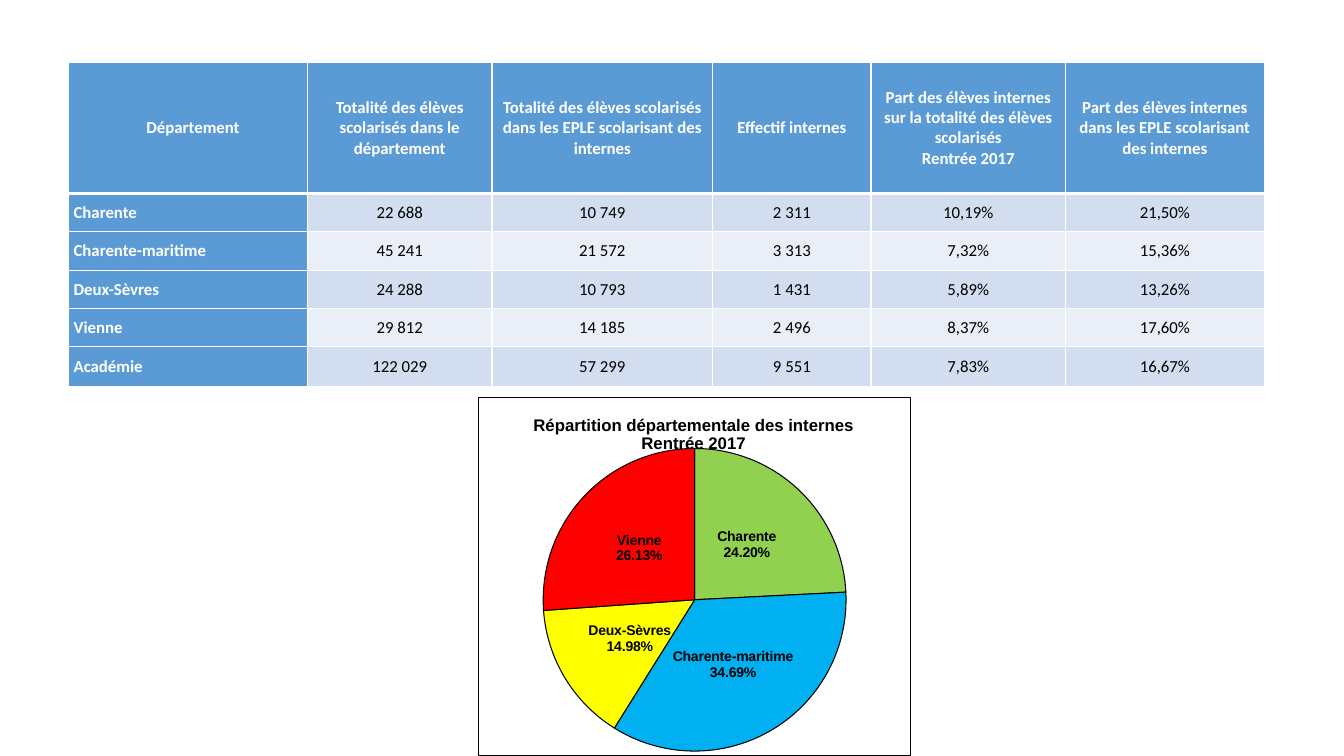
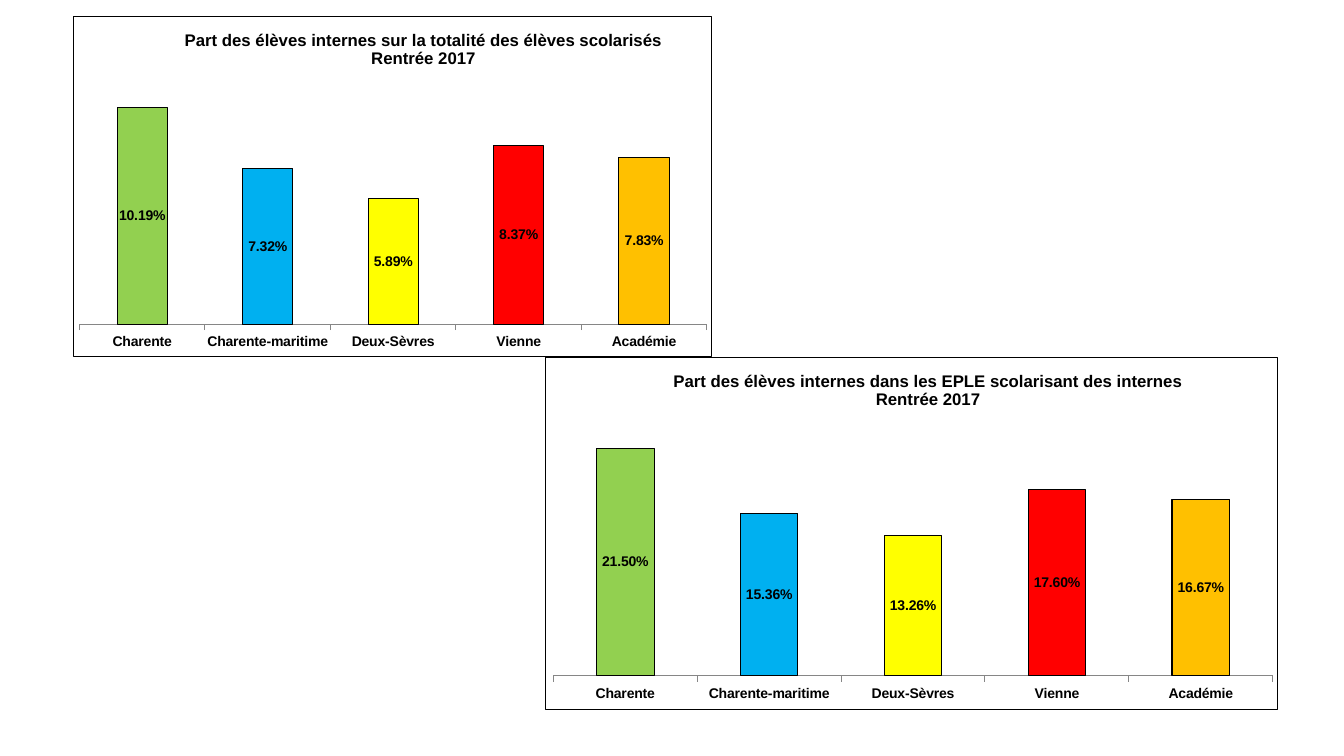
from dataclasses import dataclass
from typing import Any

from lxml import etree
from pptx import Presentation
from pptx import util as u
from pptx.chart import data as cd
from pptx.dml.color import RGBColor
from pptx.enum import chart as ce
from pptx.enum import text as te
from pptx.oxml import ns, parse_xml

PX = 9144
WHITE = RGBColor(0xFF, 0xFF, 0xFF)
BLACK = RGBColor(0, 0, 0)
HEADER_BLUE = RGBColor(0x5B, 0x9B, 0xD5)
BANDS = (RGBColor(0xD2, 0xDE, 0xEF), RGBColor(0xEA, 0xEF, 0xF7))
GREEN = RGBColor(0x92, 0xD0, 0x50)
SKY = RGBColor(0x00, 0xB0, 0xF0)
YELLOW = RGBColor(0xFF, 0xFF, 0x00)
RED = RGBColor(0xFF, 0x00, 0x00)
ORANGE = RGBColor(0xFF, 0xC0, 0x00)
POINT_COLORS = (GREEN, SKY, YELLOW, RED, ORANGE)

TITLE_FONT = {"name": "Arial", "size": u.Pt(12), "bold": True}
LABEL_FONT = {"name": "Arial", "size": u.Pt(10), "bold": True}
CHART_FONT = {"name": "Calibri", "size": u.Pt(10)}
CELL_FONT = {"name": "Calibri", "size": u.Pt(12)}
CELL_FORMAT = {
    "margin_left": 5 * PX, "margin_right": 5 * PX,
    "margin_top": 0, "margin_bottom": 0,
    "vertical_anchor": te.MSO_ANCHOR.MIDDLE,
}
LABEL_FORMAT = {
    "number_format": "0.00%", "number_format_is_linked": False,
    "position": ce.XL_LABEL_POSITION.CENTER,
}
BAR_LABELS = {"show_value": True}
PIE_LABELS = {"show_value": False, "show_percentage": True, "show_category_name": True}
VALUE_AXIS = {"visible": False, "has_major_gridlines": False, "minimum_scale": 0}
CATEGORY_AXIS = {
    "major_tick_mark": ce.XL_TICK_MARK.OUTSIDE,
    "minor_tick_mark": ce.XL_TICK_MARK.NONE,
    "has_major_gridlines": False,
}

COLUMN_WIDTHS = (237, 183, 219, 157, 193, 197)
ROW_HEIGHTS = (130, 38, 38, 38, 38, 40)
HEADERS = (
    "Département",
    "Totalité des élèves scolarisés dans le département",
    "Totalité des élèves scolarisés dans les EPLE scolarisant des internes",
    "Effectif internes",
    "Part des élèves internes sur la totalité des élèves scolarisés\vRentrée 2017",
    "Part des élèves internes dans les EPLE scolarisant des internes",
)


@dataclass(frozen=True)
class Department:
    name: str
    pupils: int
    pupils_in_eple: int
    boarders: int
    share_total: float
    share_eple: float

    def cells(self) -> list[str]:
        counts = (self.pupils, self.pupils_in_eple, self.boarders)
        shares = (self.share_total, self.share_eple)
        return [
            self.name,
            *(f"{n:,}".replace(",", chr(160)) for n in counts),
            *(f"{n:.2f}%".replace(".", ",") for n in shares),
        ]


@dataclass(frozen=True)
class Panel:
    title: str
    box: tuple[int, int, int, int]
    kind: ce.XL_CHART_TYPE
    values: tuple[float, ...]
    title_at: tuple[float, float]
    plot_at: tuple[float, float, float, float]
    axis_max: float = 0


DEPARTMENTS = (
    Department("Charente", 22688, 10749, 2311, 10.19, 21.50),
    Department("Charente-maritime", 45241, 21572, 3313, 7.32, 15.36),
    Department("Deux-Sèvres", 24288, 10793, 1431, 5.89, 13.26),
    Department("Vienne", 29812, 14185, 2496, 8.37, 17.60),
    Department("Académie", 122029, 57299, 9551, 7.83, 16.67),
)

BAR_TITLE_AT = (0.17, 0.03)
BAR_PLOT_AT = (0.01, 0.153, 0.983, 0.753)
PIE = Panel(
    "Répartition départementale des internes Rentrée 2017",
    (474, 394, 430, 356), ce.XL_CHART_TYPE.PIE,
    (24.20, 34.69, 14.98, 26.13),
    (0.12, 0.04), (0.146, 0.142, 0.708, 0.846),
)
BARS = (
    Panel(
        "Part des élèves internes sur la totalité des élèves scolarisés\nRentrée 2017",
        (72, 16, 634, 338), ce.XL_CHART_TYPE.COLUMN_CLUSTERED,
        tuple(round(d.share_total / 100, 4) for d in DEPARTMENTS),
        BAR_TITLE_AT, BAR_PLOT_AT, 0.12,
    ),
    Panel(
        "Part des élèves internes dans les EPLE scolarisant des internes\nRentrée 2017",
        (541, 354, 727, 350), ce.XL_CHART_TYPE.COLUMN_CLUSTERED,
        tuple(round(d.share_eple / 100, 4) for d in DEPARTMENTS),
        BAR_TITLE_AT, BAR_PLOT_AT, 0.25,
    ),
)


def apply(target: Any, values: dict[str, Any]) -> None:
    for name, value in values.items():
        setattr(target, name, value)


def style_font(font: Any, values: dict[str, Any], color: RGBColor = BLACK) -> None:
    apply(font, values)
    font.color.rgb = color


def outline(line: Any) -> None:
    line.color.rgb = BLACK
    line.width = u.Pt(0.75)


def manual_layout(parent: Any, index: int, place: tuple[float, ...], inner: bool) -> None:
    for old in parent.findall(ns.qn("c:layout")):
        parent.remove(old)
    layout = parse_xml(f"<c:layout {ns.nsdecls('c')}><c:manualLayout/></c:layout>")
    fields = [("layoutTarget", "inner")] if inner else []
    fields += [("xMode", "edge"), ("yMode", "edge"), *zip("xywh", place)]
    for tag, value in fields:
        etree.SubElement(layout[0], ns.qn(f"c:{tag}")).set("val", str(value))
    parent.insert(index, layout)


def border_chart(chart: Any) -> None:
    chart.element.find(ns.qn("c:chart")).addnext(parse_xml(
        f"<c:spPr {ns.nsdecls('c', 'a')}>"
        f'<a:solidFill><a:srgbClr val="{WHITE}"/></a:solidFill>'
        f'<a:ln w="{u.Pt(0.75)}"><a:solidFill><a:srgbClr val="{BLACK}"/></a:solidFill></a:ln>'
        "</c:spPr>"
    ))


def border_cell(cell: Any, bottom: int) -> None:
    tc_pr = cell._tc.get_or_add_tcPr()
    for i, (side, width) in enumerate(zip("LRTB", (1, 1, 1, bottom))):
        tc_pr.insert(i, parse_xml(
            f'<a:ln{side} {ns.nsdecls("a")} w="{u.Pt(width)}">'
            f'<a:solidFill><a:srgbClr val="{WHITE}"/></a:solidFill></a:ln{side}>'
        ))


def add_panel(s: Any, panel: Panel) -> None:
    is_pie = panel.kind == ce.XL_CHART_TYPE.PIE
    data = cd.CategoryChartData(number_format="General" if is_pie else "0.00%")
    data.categories = [d.name for d in DEPARTMENTS[:len(panel.values)]]
    data.add_series("Series 1", panel.values)
    chart = s.shapes.add_chart(panel.kind, *(n * PX for n in panel.box), data).chart
    chart.has_legend = False
    style_font(chart.font, CHART_FONT)
    border_chart(chart)

    chart.has_title = True
    title = chart.chart_title
    title.text_frame.text = panel.title
    for p in title.text_frame.paragraphs:
        style_font(p.font, TITLE_FONT)
        for r in p.runs:
            style_font(r.font, TITLE_FONT)
    manual_layout(title._element, 1, panel.title_at, False)
    manual_layout(chart.element.find(".//" + ns.qn("c:plotArea")), 0, panel.plot_at, True)

    plot = chart.plots[0]
    plot.vary_by_categories = is_pie
    series = plot.series[0]
    for i, color in enumerate(POINT_COLORS[:len(panel.values)]):
        fmt = series.points[i].format
        fmt.fill.solid()
        fmt.fill.fore_color.rgb = color
        outline(fmt.line)

    labels = series.data_labels
    apply(labels, LABEL_FORMAT | (PIE_LABELS if is_pie else BAR_LABELS))
    style_font(labels.font, LABEL_FONT)
    if is_pie:
        labels._element.find(ns.qn("c:showBubbleSize")).addnext(
            parse_xml(f"<c:separator {ns.nsdecls('c')}>\n</c:separator>"))
        return

    plot.gap_width = 150
    apply(chart.value_axis, VALUE_AXIS | {"maximum_scale": panel.axis_max})
    axis = chart.category_axis
    apply(axis, CATEGORY_AXIS)
    axis.format.line.color.rgb = RGBColor(0x86, 0x86, 0x86)
    style_font(axis.tick_labels.font, LABEL_FONT)


def add_department_table(s: Any) -> None:
    rows = [HEADERS, *(d.cells() for d in DEPARTMENTS)]
    table = s.shapes.add_table(
        len(rows), len(HEADERS), 68 * PX, 62 * PX,
        sum(COLUMN_WIDTHS) * PX, sum(ROW_HEIGHTS) * PX,
    ).table
    for column, width in zip(table.columns, COLUMN_WIDTHS):
        column.width = width * PX
    for row, height in zip(table.rows, ROW_HEIGHTS):
        row.height = height * PX
    for i, texts in enumerate(rows):
        for j, text in enumerate(texts):
            cell = table.cell(i, j)
            heading = i == 0 or j == 0
            apply(cell, CELL_FORMAT)
            cell.fill.solid()
            cell.fill.fore_color.rgb = HEADER_BLUE if heading else BANDS[(i - 1) % 2]
            border_cell(cell, 3 if i == 0 else 1)
            p = cell.text_frame.paragraphs[0]
            p.text = text
            p.alignment = te.PP_ALIGN.LEFT if i and not j else te.PP_ALIGN.CENTER
            for r in p.runs:
                style_font(r.font, CELL_FONT | {"bold": heading}, WHITE if heading else BLACK)
    first = table.cell(0, 0).text_frame.paragraphs[0]
    first._p.get_or_add_pPr().set("marL", str(10 * PX))


def main() -> None:
    prs = Presentation()
    prs.slide_width, prs.slide_height = 1333 * PX, 750 * PX
    overview, shares = (prs.slides.add_slide(prs.slide_layouts[6]) for _ in range(2))
    add_panel(overview, PIE)
    add_department_table(overview)
    for panel in BARS:
        add_panel(shares, panel)
    prs.save("out.pptx")


if __name__ == "__main__":
    main()
